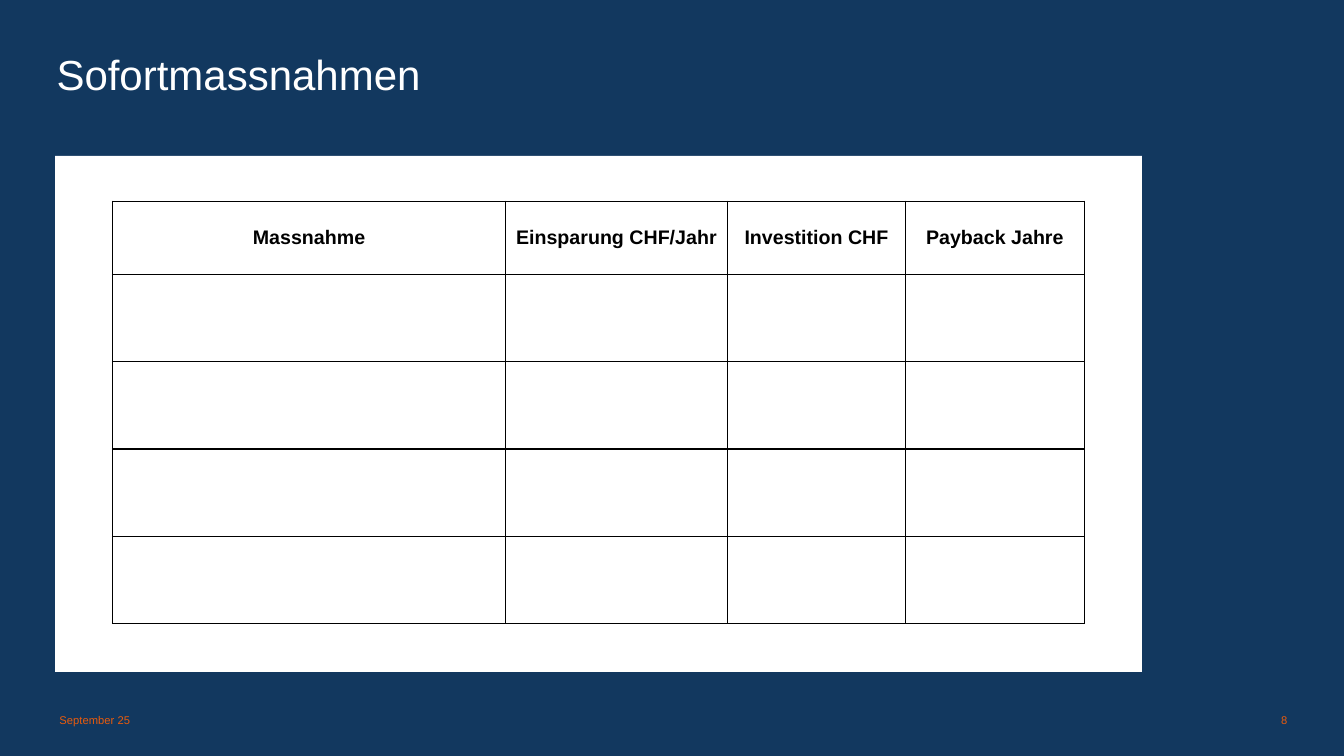
import pptx
import pptx.dml.color
import pptx.enum.shapes
import pptx.enum.text
import pptx.oxml
import pptx.oxml.ns
import pptx.util

Pt = pptx.util.Pt
ALIGN = pptx.enum.text.PP_ALIGN
ANCHOR = pptx.enum.text.MSO_ANCHOR

NAVY, WHITE, BLACK, ORANGE = "12385F", "FFFFFF", "000000", "EA5B0C"
FONT = "Arial"
HEADINGS = ["Massnahme", "Einsparung CHF/Jahr", "Investition CHF", "Payback Jahre"]
COLUMN_WIDTHS = [280.8, 158.4, 127.4, 127.4]
HEADER_HEIGHT, ROW_HEIGHT, EMPTY_ROWS = 52.2, 62.4, 4


def color(value):
    return pptx.dml.color.RGBColor.from_string(value)


def add_run(p, text, size, value, bold=False):
    r = p.add_run()
    r.text = text
    r.font.name = FONT
    r.font.size = Pt(size)
    r.font.bold = bold
    r.font.color.rgb = color(value)


def fill_frame(tf, text, size, value, align, anchor):
    """Set one line of text in a frame without insets."""
    tf.word_wrap = True
    tf.auto_size = pptx.enum.text.MSO_AUTO_SIZE.NONE
    tf.vertical_anchor = anchor
    tf.margin_left = tf.margin_right = tf.margin_top = tf.margin_bottom = 0
    p = tf.paragraphs[0]
    p.alignment = align
    add_run(p, text, size, value)


def place_title(s, text, left, top, width, height):
    sp = s.shapes.title
    sp.left, sp.top, sp.width, sp.height = Pt(left), Pt(top), Pt(width), Pt(height)
    fill_frame(sp.text_frame, text, 30, WHITE, ALIGN.LEFT, ANCHOR.TOP)


def add_footer(s, date, number, left, top, width, height):
    number_width = 84
    number_left = left + width - number_width
    for text, x, w, align in [(date, left, 120, ALIGN.LEFT),
                              (number, number_left, number_width, ALIGN.RIGHT)]:
        sp = s.shapes.add_textbox(Pt(x), Pt(top), Pt(w), Pt(height))
        fill_frame(sp.text_frame, text, 8, ORANGE, align, ANCHOR.BOTTOM)


def style_cell(cell):
    """White fill and a thin black border on every side."""
    cell.fill.solid()
    cell.fill.fore_color.rgb = color(WHITE)
    tc_pr = cell._tc.get_or_add_tcPr()
    for i, side in enumerate("LRTB"):
        tc_pr.insert(i, pptx.oxml.parse_xml(
            f'<a:ln{side} {pptx.oxml.ns.nsdecls("a")} w="{Pt(1)}">'
            f'<a:solidFill><a:srgbClr val="{BLACK}"/></a:solidFill></a:ln{side}>'))


def add_measures(s, left, top, width, height):
    """White panel with the table of measures inside it."""
    panel = s.shapes.add_shape(pptx.enum.shapes.MSO_SHAPE.RECTANGLE,
                               Pt(left), Pt(top), Pt(width), Pt(height))
    panel.shadow.inherit = False
    panel.fill.solid()
    panel.fill.fore_color.rgb = color(WHITE)
    panel.line.fill.background()

    row_heights = [HEADER_HEIGHT] + [ROW_HEIGHT] * EMPTY_ROWS
    table = s.shapes.add_table(
        len(row_heights), len(HEADINGS), Pt(left + 41), Pt(top + 32.4),
        Pt(sum(COLUMN_WIDTHS)), Pt(sum(row_heights))).table
    table.first_row = table.horz_banding = False
    for column, w in zip(table.columns, COLUMN_WIDTHS):
        column.width = Pt(w)
    for row, h in zip(table.rows, row_heights):
        row.height = Pt(h)
    for cell in table.iter_cells():
        style_cell(cell)
    for cell, heading in zip(table.rows[0].cells, HEADINGS):
        cell.vertical_anchor = ANCHOR.MIDDLE
        p = cell.text_frame.paragraphs[0]
        p.alignment = ALIGN.CENTER
        add_run(p, heading, 14, BLACK, bold=True)


def main():
    prs = pptx.Presentation()
    prs.slide_width, prs.slide_height = Pt(960), Pt(540)
    s = prs.slides.add_slide(prs.slide_layouts[5])
    s.background.fill.solid()
    s.background.fill.fore_color.rgb = color(NAVY)
    place_title(s, "Sofortmassnahmen", 40.4, 34.6, 879, 62.6)
    add_measures(s, 39.4, 111.4, 776.2, 368.6)
    add_footer(s, "September 25", "8", 42.5, 508.3, 877, 10.8)
    prs.save("out.pptx")


if __name__ == "__main__":
    main()
